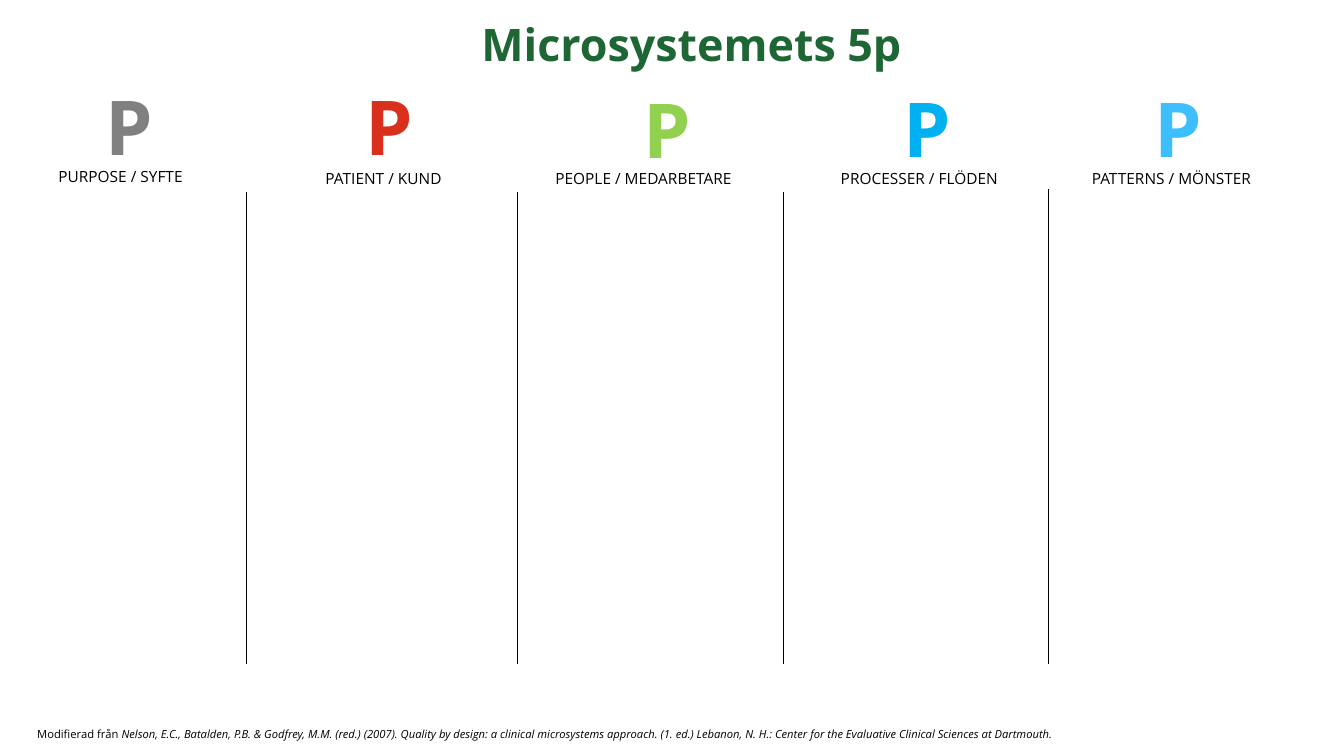
from lxml import etree
from pptx import Presentation
from pptx import util as u
from pptx.dml.color import RGBColor
from pptx.enum import shapes, text
from pptx.oxml.ns import qn

deck = Presentation()
deck.slide_width = u.Inches(13.33)
deck.slide_height = u.Inches(7.5)
slide = deck.slides.add_slide(deck.slide_layouts[6])


def paint(color, code):
    color.rgb = RGBColor.from_string(code)


def write(x, y, w, h, words, size, code="000000", bold=False, wrap=True, center=False):
    box = slide.shapes.add_textbox(u.Inches(x), u.Inches(y), u.Inches(w), u.Inches(h))
    frame = box.text_frame
    frame.word_wrap = wrap
    para = frame.paragraphs[0]
    para.alignment = text.PP_ALIGN.CENTER if center else text.PP_ALIGN.LEFT
    for part in words:
        run = para.add_run()
        run.text = part
        run.font.name = "Open Sans"
        run.font.size = u.Pt(size)
        run.font.bold = bold
        paint(run.font.color, code)
    return frame


title = write(4.34, 0, 5.04, 0.74, ["Microsystemets 5p"], 32, "1E6633", bold=True, center=True)
title.vertical_anchor = text.MSO_ANCHOR.MIDDLE
title.paragraphs[0].line_spacing = 1.25

columns = [
    ("PURPOSE / SYFTE", "808080", 0.93, 0.74, 0.48, 1.61, 1.61),
    ("PATIENT / KUND", "D8301D", 3.51, 0.74, 3.13, 1.63, 1.46),
    ("PEOPLE / MEDARBETARE", "92D050", 6.26, 0.77, 5.41, 1.63, 2.13),
    ("PROCESSER / FLÖDEN", "00B0F0", 8.84, 0.76, 8.24, 1.63, 1.91),
    ("PATTERNS / MÖNSTER", "3CBEFF", 11.33, 0.76, 10.73, 1.63, 1.91),
]
for label, code, px, py, x, y, w in columns:
    write(px, py, 0.71, 1.01, ["P"], 54, code, bold=True, wrap=False, center=True)
    write(x, y, w, 0.29, [label], 11)

for x, top in [(2.44, 1.9), (5.13, 1.9), (7.77, 1.9), (10.4, 1.88)]:
    rule = slide.shapes.add_connector(
        shapes.MSO_CONNECTOR.STRAIGHT, u.Inches(x), u.Inches(top), u.Inches(x), u.Inches(6.59))
    rule.line.width = u.Pt(0.5)
    paint(rule.line.color, "000000")
    etree.SubElement(rule._element.spPr, qn("a:effectLst"))

source = write(0.27, 7.17, 12.23, 0.24, [
    "Modifierad från ",
    "Nelson, E.C., Batalden, P.B. & Godfrey, M.M. (red.) (2007). Quality by design: "
    "a clinical microsystems approach. (1. ed.) Lebanon, N. H.: Center for the "
    "Evaluative Clinical Sciences at Dartmouth.",
], 8)
source.paragraphs[0].runs[1].font.italic = True

deck.save("out.pptx")
